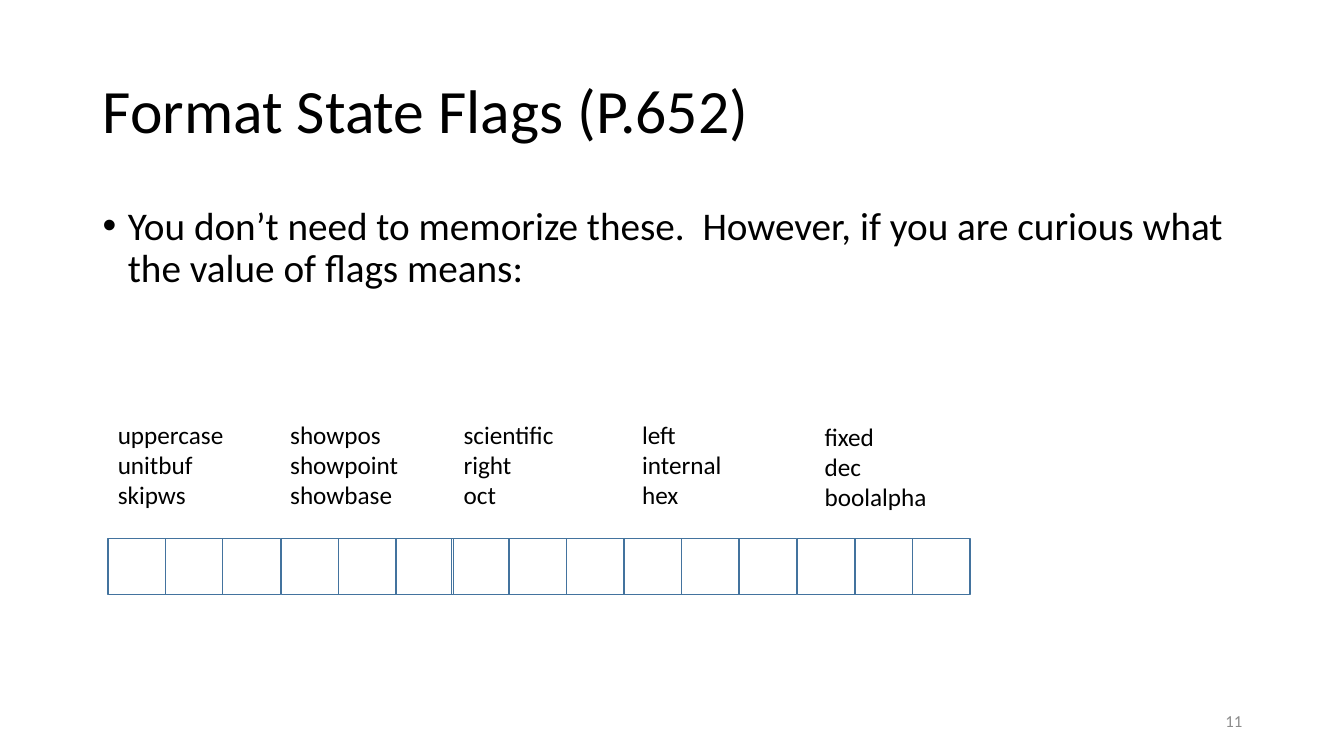
"""Build the slide on format state flags: a row of flag bits with their names."""
import pptx
import pptx.dml.color
import pptx.enum.shapes
import pptx.enum.text
import pptx.util
from lxml import etree

PX = 9144
ALIGN = pptx.enum.text.PP_ALIGN
ANCHOR = pptx.enum.text.MSO_ANCHOR


def color(hex_value):
    """Turn a hex string into a colour."""
    return pptx.dml.color.RGBColor.from_string(hex_value)


def write(shape, box, lines, size, hex_value="000000", align=ALIGN.LEFT, anchor=ANCHOR.TOP):
    """Place a text shape and fill it with one paragraph per line."""
    shape.left, shape.top, shape.width, shape.height = [length * PX for length in box]
    frame = shape.text_frame
    frame.word_wrap = True
    frame.auto_size = pptx.enum.text.MSO_AUTO_SIZE.NONE
    frame.vertical_anchor = anchor
    for index, line in enumerate(lines):
        paragraph = frame.add_paragraph() if index else frame.paragraphs[0]
        paragraph.alignment = align
        run = paragraph.add_run()
        run.text = line
        run.font.name = "Calibri"
        run.font.size = pptx.util.Pt(size)
        run.font.color.rgb = color(hex_value)
    return frame.paragraphs[0]


presentation = pptx.Presentation()
presentation.slide_width = 1333 * PX
presentation.slide_height = 750 * PX
slide = presentation.slides.add_slide(presentation.slide_layouts[5])

title = write(slide.shapes.title, (92, 40, 1150, 145), ["Format State Flags (P.652)"], 44, anchor=ANCHOR.MIDDLE)
title.line_spacing = 0.9

body_text = "You don’t need to memorize these.  However, if you are curious what the value of flags means:"
body = write(slide.shapes.add_textbox(0, 0, PX, PX), (92, 200, 1150, 108), [body_text], 28)
body.line_spacing = 0.9
body.space_before = pptx.util.Pt(10)
properties = body._p.get_or_add_pPr()
properties.set("marL", str(25 * PX))
properties.set("indent", str(-25 * PX))
namespace = "{http://schemas.openxmlformats.org/drawingml/2006/main}"
etree.SubElement(properties, namespace + "buFont", typeface="Arial")
etree.SubElement(properties, namespace + "buChar", char="•")

write(slide.shapes.add_textbox(0, 0, PX, PX), (942, 695, 300, 40), ["11"], 12, "8C8C8C", ALIGN.RIGHT, ANCHOR.MIDDLE)

bit_width, bit_height = 57, 56
flag_groups = [
    (107, (107, 411, 153, 101), ["uppercase", "unitbuf", "skipws"]),
    (279, (278, 411, 143, 101), ["showpos", "showpoint", "showbase"]),
    (448, (450, 411, 157, 101), ["scientific", "right", "oct"]),
    (619, (627, 411, 152, 101), ["left", "internal", "hex"]),
    (791, (808, 413, 173, 101), ["fixed", "dec", "boolalpha"]),
]
for bits_left, label_box, flags in flag_groups:
    group = slide.shapes.add_group_shape()
    for position in range(len(flags)):
        bit = group.shapes.add_shape(
            pptx.enum.shapes.MSO_SHAPE.RECTANGLE,
            (bits_left + position * bit_width) * PX, 534 * PX, bit_width * PX, bit_height * PX)
        bit.shadow.inherit = False
        bit.fill.background()
        bit.line.color.rgb = color("43739E")
        bit.line.width = pptx.util.Pt(1)
    write(slide.shapes.add_textbox(0, 0, PX, PX), label_box, flags, 18)

presentation.save("out.pptx")
